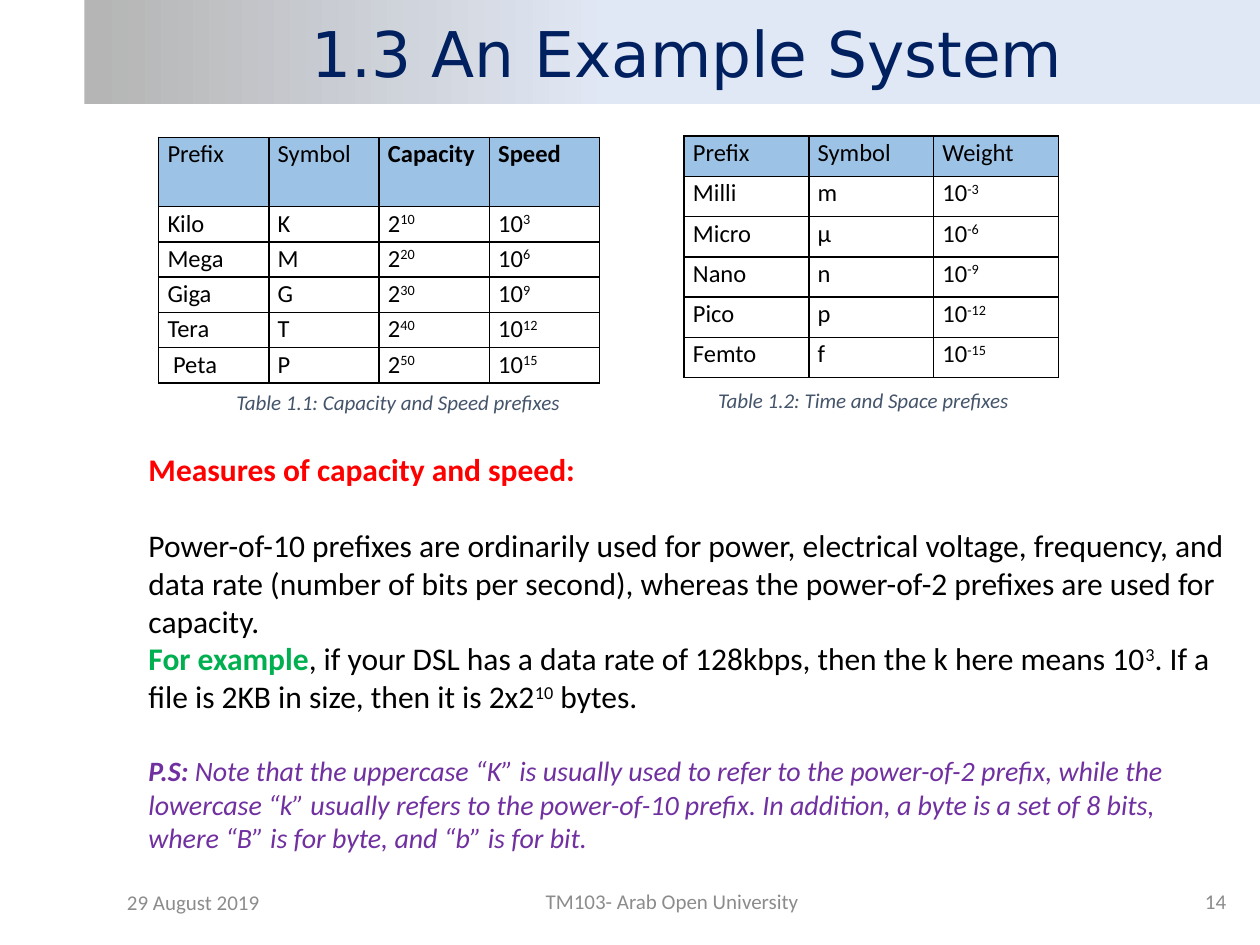
from dataclasses import dataclass

from lxml.etree import SubElement
from pptx import Presentation
from pptx.dml.color import RGBColor
from pptx.enum.shapes import MSO_SHAPE
from pptx.enum.text import MSO_ANCHOR, PP_ALIGN
from pptx.oxml.ns import qn
from pptx.util import Inches, Pt

BLACK, NAVY, SLATE, GRAY = "000000", "002060", "44546A", "8C8C8C"
RED, GREEN, PURPLE, HEAD = "FF0000", "00B050", "7030A0", "9CC2E5"


@dataclass
class Style:
    size: float
    color: str = BLACK
    bold: bool | None = False
    italic: bool = False
    face: str = "Calibri"


@dataclass
class Span:
    text: str
    raised: bool = False
    bold: bool | None = None
    color: str | None = None


@dataclass
class Para:
    spans: list[Span]
    style: Style
    align: PP_ALIGN = PP_ALIGN.LEFT
    before: float = 0
    lines: float = 1


@dataclass
class Box:
    left: float
    top: float
    width: float
    height: float

    def place(self) -> tuple:
        return tuple(map(Inches, (self.left, self.top, self.width, self.height)))


@dataclass
class Grid:
    box: Box
    rows: list[list[str]]
    first: float
    rest: float
    bold: tuple[str, ...] = ()


def rgb(code: str) -> RGBColor:
    return RGBColor.from_string(code)


def power(text: str) -> list[Span]:
    return [Span(part, n == 1) for n, part in enumerate(text.split("^"))]


def write(frame, paras: list[Para]) -> None:
    for n, item in enumerate(paras):
        para = frame.add_paragraph() if n else frame.paragraphs[0]
        para.alignment = item.align
        para.line_spacing = item.lines
        if item.before:
            para.space_before = Pt(item.before)
        style = item.style
        font = para.font
        font.size, font.name = Pt(style.size), style.face
        font.italic = style.italic
        font.color.rgb = rgb(style.color)
        if style.bold is not None:
            font.bold = style.bold
        for span in item.spans:
            run = para.add_run()
            run.text = span.text
            if span.bold is not None:
                run.font.bold = span.bold
            if span.color:
                run.font.color.rgb = rgb(span.color)
            if span.raised:
                run._r.get_or_add_rPr().set("baseline", "30000")


def add_text(slide, box: Box, paras: list[Para], anchor=MSO_ANCHOR.TOP, wrap=True) -> None:
    frame = slide.shapes.add_textbox(*box.place()).text_frame
    frame.word_wrap = wrap
    frame.vertical_anchor = anchor
    write(frame, paras)


def border(cell) -> None:
    props = cell._tc.get_or_add_tcPr()
    for side in ("a:lnL", "a:lnR", "a:lnT", "a:lnB"):
        line = SubElement(props, qn(side), w=str(Pt(1)))
        fill = SubElement(line, qn("a:solidFill"))
        SubElement(fill, qn("a:srgbClr"), val=BLACK)


def new_table(slide, rows: int, cols: int, box: Box):
    table = slide.shapes.add_table(rows, cols, *box.place()).table
    table.first_row = table.horz_banding = False
    return table


def fill_cell(cell, para: Para, inset: float) -> None:
    cell.margin_left = cell.margin_right = Inches(inset)
    cell.margin_top = cell.margin_bottom = 0
    cell.fill.background()
    write(cell.text_frame, [para])


def add_grid(slide, grid: Grid) -> None:
    table = new_table(slide, len(grid.rows), len(grid.rows[0]), grid.box)
    for r, row in enumerate(grid.rows):
        table.rows[r].height = Inches(grid.rest if r else grid.first)
        for c, text in enumerate(row):
            cell = table.cell(r, c)
            border(cell)
            style = Style(14, bold=text in grid.bold)
            fill_cell(cell, Para(power(text), style, lines=1.07), 0.07)
            if r == 0:
                cell.fill.solid()
                cell.fill.fore_color.rgb = rgb(HEAD)


def add_band(slide, box: Box) -> None:
    band = slide.shapes.add_shape(MSO_SHAPE.RECTANGLE, *box.place())
    band.shadow.inherit = False
    band.line.fill.background()
    band.fill.gradient()
    band.fill.gradient_angle = 0
    for stop, (place, code) in zip(band.fill.gradient_stops, ((0.01, "B5B5B5"), (0.45, "E1E8F5"))):
        stop.position = place
        stop.color.rgb = rgb(code)


def main() -> None:
    deck = Presentation()
    deck.slide_width, deck.slide_height = Inches(10), Inches(7.5)
    slide = deck.slides.add_slide(deck.slide_layouts[6])

    add_band(slide, Box(0.67, 0, 9.33, 0.83))
    title = Para([Span("1.3 An Example System")], Style(36, NAVY, face="DejaVu Sans"), PP_ALIGN.CENTER)
    add_text(slide, Box(0.91, 0, 9.09, 0.83), [title], MSO_ANCHOR.MIDDLE)

    large = [("Kilo", "K"), ("Mega", "M"), ("Giga", "G"), ("Tera", "T"), (" Peta", "P")]
    small = [("Milli", "m"), ("Micro", "µ"), ("Nano", "n"), ("Pico", "p"), ("Femto", "f")]
    sizes = [["Prefix", "Symbol", "Capacity", "Speed"]]
    sizes += [[name, sign, f"2^{10 * n}", f"10^{3 * n}"] for n, (name, sign) in enumerate(large, 1)]
    times = [["Prefix", "Symbol", "Weight"]]
    times += [[name, sign, f"10^-{3 * n}"] for n, (name, sign) in enumerate(small, 1)]
    add_grid(slide, Grid(Box(1.26, 1.09, 3.5, 1.94), sizes, 0.55, 0.28, ("Capacity", "Speed")))
    add_grid(slide, Grid(Box(5.43, 1.08, 2.97, 1.92), times, 0.32, 0.32))

    label = Style(12, SLATE, italic=True)
    add_text(slide, Box(1.74, 3.04, 2.85, 0.3),
             [Para([Span(" Table 1.1: Capacity and Speed prefixes")], label)], wrap=False)
    table = new_table(slide, 1, 1, Box(5.58, 3.08, 2.67, 0.2))
    fill_cell(table.cell(0, 0), Para([Span("Table 1.2: Time and Space prefixes")], label), 0.12)

    plain = Style(18, bold=None)
    add_text(slide, Box(1.08, 3.52, 8.75, 3.43), [
        Para([Span("Measures of capacity and speed:")], Style(18, RED, True)),
        Para([Span("Power-of-10 prefixes are ordinarily used for power, electrical voltage, "
                   "frequency, and data rate (number of bits per second), whereas the "
                   "power-of-2 prefixes are used for capacity.")], plain, before=22),
        Para([Span("For example", bold=True, color=GREEN),
              Span(", if your DSL has a data rate of 128kbps, then the k here means 10"),
              Span("3", True),
              Span(". If a file is 2KB in size, then it is 2x2"),
              Span("10", True),
              Span(" bytes.")], plain),
        Para([Span("P.S: ", bold=True),
              Span("Note that the uppercase “K” is usually used to refer to the power-of-2 "
                   "prefix, while the lowercase “k” usually refers to the power-of-10 prefix. "
                   "In addition, a byte is a set of 8 bits, where “B” is for byte, and “b” is "
                   "for bit.")], Style(16, PURPLE, None, True), before=22),
    ])

    for box, text, align in (
        (Box(0.91, 6.96, 2.33, 0.4), "29 August 2019", PP_ALIGN.LEFT),
        (Box(3.75, 6.95, 3.17, 0.4), "TM103- Arab Open University", PP_ALIGN.CENTER),
        (Box(7.5, 6.95, 2.33, 0.4), "14", PP_ALIGN.RIGHT),
    ):
        add_text(slide, box, [Para([Span(text)], Style(12, GRAY), align)], MSO_ANCHOR.MIDDLE)

    deck.save("out.pptx")


if __name__ == "__main__":
    main()
